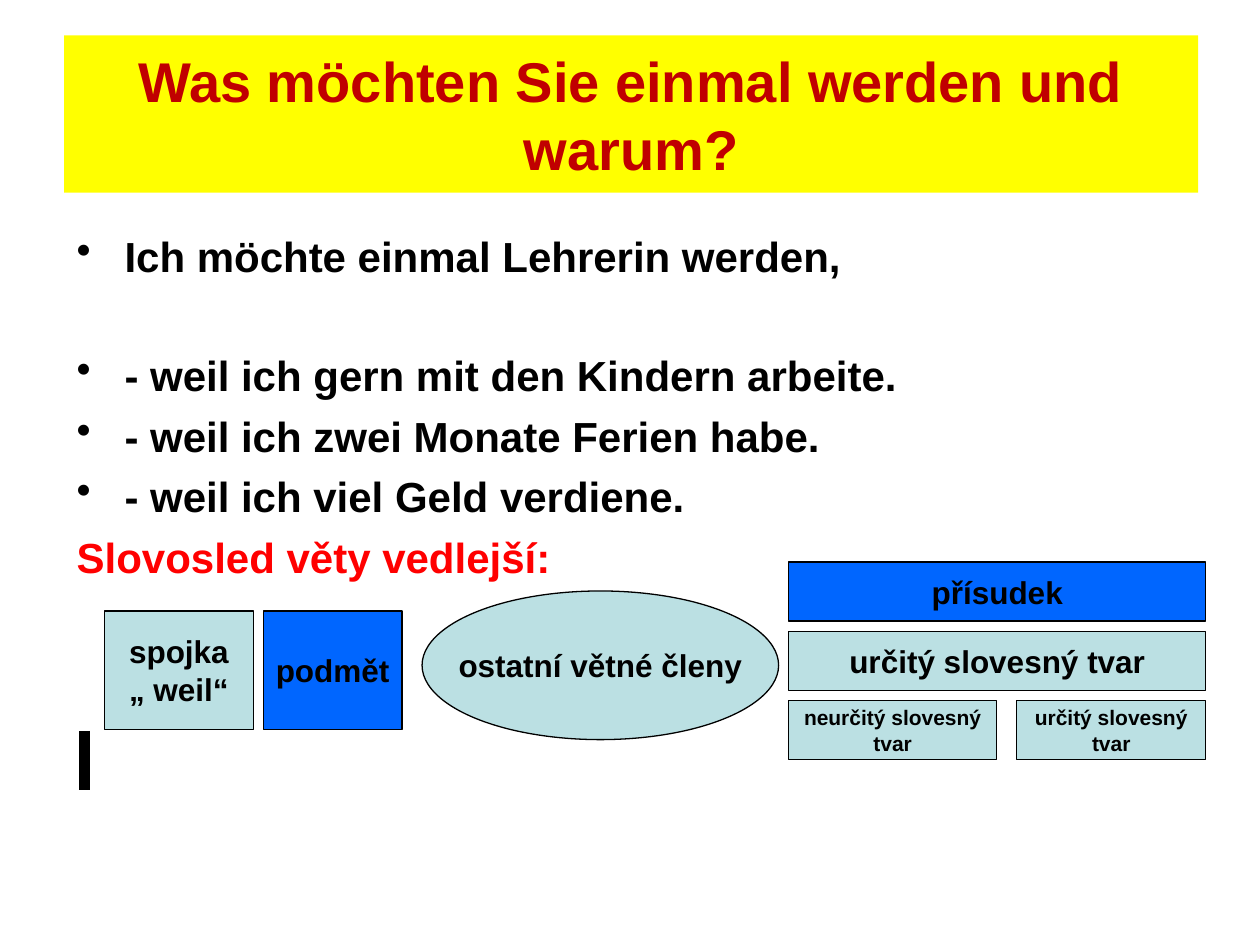
import pptx
import pptx.util
import pptx.dml.color
import pptx.enum.shapes
import pptx.enum.text
import pptx.oxml
import lxml.etree

Inches = pptx.util.Inches
Pt = pptx.util.Pt
SHAPE = pptx.enum.shapes.MSO_SHAPE
ALIGN = pptx.enum.text.PP_ALIGN
ANCHOR = pptx.enum.text.MSO_ANCHOR

BLACK, RED, DARK_RED = "000000", "FF0000", "C00000"
YELLOW, BLUE, PALE = "FFFF00", "0066FF", "BBE0E3"


def colour(value):
    return pptx.dml.color.RGBColor.from_string(value)


def set_values(target, values):
    for name, value in values.items():
        setattr(target, name, value)


def write(para, text, size, text_colour=BLACK):
    span = para.add_run()
    span.text = text
    set_values(span.font, {"name": "Arial", "size": Pt(size), "bold": True})
    span.font.color.rgb = colour(text_colour)


def set_indent(para, bullet):
    """Hanging indent, with a bullet sign when asked for."""
    properties = para._p.get_or_add_pPr()
    hang = Inches(0.38)
    properties.set("marL", str(hang))
    properties.set("indent", str(-hang))
    tag = "a:buChar" if bullet else "a:buNone"
    mark = lxml.etree.SubElement(properties, pptx.oxml.ns.qn(tag))
    if bullet:
        mark.set("char", "•")


def add_box(page, kind, place, fill, lines, size, text_colour=BLACK,
            outline=True, wrap=False):
    """Filled shape with centred text, one paragraph per line."""
    box = page.shapes.add_shape(kind, *map(Inches, place))
    box.shadow.inherit = False
    box.fill.solid()
    box.fill.fore_color.rgb = colour(fill)
    if outline:
        box.line.color.rgb = colour(BLACK)
        box.line.width = Pt(0.75)
    else:
        box.line.fill.background()
    frame = box.text_frame
    set_values(frame, {"word_wrap": wrap, "vertical_anchor": ANCHOR.MIDDLE})
    for index, line in enumerate(lines):
        para = frame.add_paragraph() if index else frame.paragraphs[0]
        para.alignment = ALIGN.CENTER
        write(para, line, size, text_colour)


def add_title(page, place):
    add_box(page, SHAPE.RECTANGLE, place, YELLOW,
            ["Was möchten Sie einmal werden und warum?"], 32, DARK_RED,
            outline=False, wrap=True)


def add_sentences(page, place):
    """Example sentences and the red heading of the diagram."""
    frame = page.shapes.add_textbox(*map(Inches, place)).text_frame
    frame.word_wrap = True
    gap, wide_gap = 5.8, 39.2
    rows = [
        ("Ich möchte einmal Lehrerin werden,", gap, True, BLACK),
        ("- weil ich gern mit den Kindern arbeite.", wide_gap, True, BLACK),
        ("- weil ich zwei Monate Ferien habe.", gap, True, BLACK),
        ("- weil ich viel Geld verdiene.", gap, True, BLACK),
        ("Slovosled věty vedlejší:", gap, False, RED),
    ]
    for index, (text, space, bullet, text_colour) in enumerate(rows):
        para = frame.add_paragraph() if index else frame.paragraphs[0]
        para.space_before = Pt(space)
        set_indent(para, bullet)
        write(para, text, 24, text_colour)


def add_clause_start(page, left, top):
    """Conjunction, subject and the other parts of the clause."""
    add_box(page, SHAPE.RECTANGLE, (left, top, 1.18, 0.94), PALE,
            ["spojka", "„ weil“"], 18)
    add_box(page, SHAPE.RECTANGLE, (left + 1.26, top, 1.1, 0.94), BLUE,
            ["podmět"], 18)
    add_box(page, SHAPE.OVAL, (left + 2.52, top - 0.16, 2.83, 1.18), PALE,
            ["ostatní větné členy"], 18)


def add_predicate(page, left, top, width):
    """Predicate stack: two full rows above a split row."""
    height, step = 0.47, 0.55
    right_width = 1.5
    cells = [
        (0, 0, width, BLUE, ["přísudek"], 18),
        (0, 1, width, PALE, ["určitý slovesný tvar"], 18),
        (0, 2, 1.65, PALE, ["neurčitý slovesný", "tvar"], 12),
        (width - right_width, 2, right_width, PALE,
         ["určitý slovesný", "tvar"], 12),
    ]
    for offset, row, cell_width, fill, lines, size in cells:
        place = (left + offset, top + row * step, cell_width, height)
        add_box(page, SHAPE.RECTANGLE, place, fill, lines, size)


def add_bar(page, left, top, height):
    """Thick upright line below the conjunction."""
    bar = page.shapes.add_connector(
        pptx.enum.shapes.MSO_CONNECTOR.STRAIGHT,
        *map(Inches, (left, top, left, top + height)))
    bar.line.color.rgb = colour(BLACK)
    bar.line.width = Pt(6)
    lxml.etree.SubElement(bar._element.spPr, pptx.oxml.ns.qn("a:effectLst"))


def main():
    deck = pptx.Presentation()
    set_values(deck, {"slide_width": Inches(10), "slide_height": Inches(7.5)})
    page = deck.slides.add_slide(deck.slide_layouts[6])
    add_title(page, (0.51, 0.28, 9, 1.25))
    add_sentences(page, (0.51, 1.78, 9.29, 4.95))
    add_clause_start(page, 0.83, 4.85)
    add_bar(page, 0.67, 5.8, 0.47)
    add_predicate(page, 6.26, 4.46, 3.31)
    deck.save("out.pptx")


if __name__ == "__main__":
    main()
